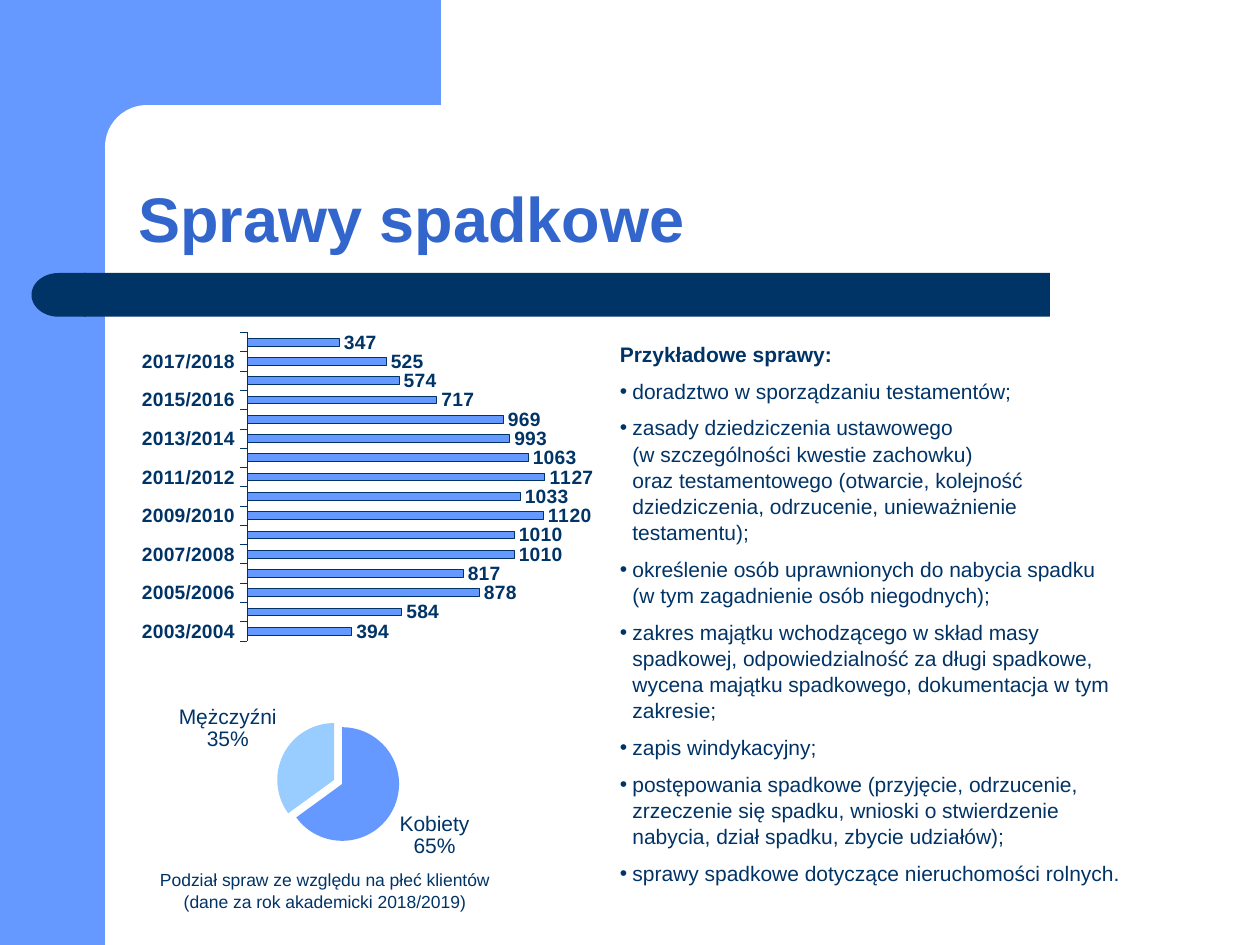
from lxml.etree import SubElement
from pptx import Presentation
from pptx.chart.data import CategoryChartData
from pptx.dml.color import RGBColor
from pptx.enum.chart import XL_CHART_TYPE, XL_LABEL_POSITION, XL_TICK_MARK
from pptx.enum.shapes import MSO_SHAPE
from pptx.enum.text import MSO_ANCHOR, MSO_AUTO_SIZE, PP_ALIGN
from pptx.oxml import parse_xml
from pptx.oxml.ns import nsdecls, qn
from pptx.util import Pt

FONT = "Arial"
BLUE, LIGHT, NAVY, WHITE, TITLE_BLUE = "6699FF", "99CCFF", "003366", "FFFFFF", "3366CC"

TITLE = "Sprawy spadkowe"
HEADING = "Przykładowe sprawy:"
EXAMPLES = [
    "doradztwo w sporządzaniu testamentów;",
    "zasady dziedziczenia ustawowego\n(w szczególności kwestie zachowku)\n"
    "oraz testamentowego (otwarcie, kolejność dziedziczenia, odrzucenie, "
    "unieważnienie testamentu);",
    "określenie osób uprawnionych do nabycia spadku\n(w tym zagadnienie osób niegodnych);",
    "zakres majątku wchodzącego w skład masy spadkowej, odpowiedzialność za długi "
    "spadkowe, wycena majątku spadkowego, dokumentacja w tym zakresie;",
    "zapis windykacyjny;",
    "postępowania spadkowe (przyjęcie, odrzucenie, zrzeczenie się spadku, wnioski "
    "o stwierdzenie nabycia, dział spadku, zbycie udziałów);",
    "sprawy spadkowe dotyczące nieruchomości rolnych.",
]
CAPTION = "Podział spraw ze względu na płeć klientów (dane za rok akademicki 2018/2019)"
FIRST_YEAR = 2003
CASES = [394, 584, 878, 817, 1010, 1010, 1120, 1033,
         1127, 1063, 993, 969, 717, 574, 525, 347]
CLIENTS = {"Kobiety": 65, "Mężczyźni": 35}

# shape, left, top, width, height, colour, rotation
DECORATION = [
    (MSO_SHAPE.RECTANGLE, 0, 0, 60, 540, BLUE, 0),
    (MSO_SHAPE.RECTANGLE, 54, 0, 198, 84, BLUE, 0),
    (MSO_SHAPE.ROUNDED_RECTANGLE, 60, 60, 402, 48, WHITE, 0),
    (MSO_SHAPE.RECTANGLE, 48, 156, 552, 25, NAVY, 0),
    (MSO_SHAPE.FLOWCHART_DELAY, 18, 156, 31, 25, NAVY, 180),
]


def colour(hex_code):
    return RGBColor.from_string(hex_code)


def set_font(font, size, hex_code=NAVY, bold=False):
    font.name, font.size, font.bold = FONT, Pt(size), bold
    font.color.rgb = colour(hex_code)


def place(shape, left, top, width, height):
    shape.left, shape.top, shape.width, shape.height = map(Pt, (left, top, width, height))


def set_bullet(paragraph, character=None, indent=0):
    """Give the paragraph a hanging bullet, or none; call before setting the font."""
    properties = paragraph._p.get_or_add_pPr()
    properties.set("marL", str(Pt(indent)))
    properties.set("indent", str(-Pt(indent)))
    if character:
        SubElement(properties, qn("a:buChar")).set("char", character)
    else:
        SubElement(properties, qn("a:buNone"))


def add_chart(kind, box, categories, values, plot):
    """Add a one-series chart whose inner plot area takes the given fractions."""
    data = CategoryChartData()
    data.categories = categories
    data.add_series("Series 1", values)
    chart = slide.shapes.add_chart(kind, *map(Pt, box), data).chart
    chart.has_legend = chart.has_title = False
    set_font(chart.font, 12)
    parts = "".join(f'<c:{name} val="{value}"/>' for name, value in zip("xywh", plot))
    layout = parse_xml(
        f'<c:layout {nsdecls("c")}><c:manualLayout><c:layoutTarget val="inner"/>'
        f'<c:xMode val="edge"/><c:yMode val="edge"/>{parts}</c:manualLayout></c:layout>')
    area = chart._chartSpace.chart.plotArea
    for old in area.findall(qn("c:layout")):
        area.remove(old)
    area.insert(0, layout)
    return chart


presentation = Presentation()
presentation.slide_width, presentation.slide_height = Pt(720), Pt(540)
slide = presentation.slides.add_slide(presentation.slide_layouts[1])
title, body = slide.placeholders

for kind, left, top, width, height, fill, rotation in DECORATION:
    shape = slide.shapes.add_shape(kind, *map(Pt, (left, top, width, height)))
    shape.shadow.inherit = False
    shape.fill.solid()
    shape.fill.fore_color.rgb = colour(fill)
    shape.line.fill.background()
    shape.rotation = rotation
    if kind == MSO_SHAPE.ROUNDED_RECTANGLE:
        shape.adjustments[0] = 0.5

# Title and list lie in front of the decoration
for placeholder in (title, body):
    slide.shapes._spTree.append(placeholder._element)
    placeholder.text_frame.auto_size = MSO_AUTO_SIZE.NONE

place(title, 72, 60, 630, 90)
title.text_frame.text = TITLE
title.text_frame.vertical_anchor = MSO_ANCHOR.BOTTOM
heading = title.text_frame.paragraphs[0]
heading.alignment = PP_ALIGN.LEFT
heading.line_spacing = 0.9
set_font(heading.font, 36, TITLE_BLUE, True)

place(body, 347, 191, 308, 320)
body.text_frame.vertical_anchor = MSO_ANCHOR.TOP
for index, text in enumerate([HEADING] + EXAMPLES):
    paragraph = body.text_frame.paragraphs[0] if index == 0 else body.text_frame.add_paragraph()
    paragraph.text = text
    paragraph.line_spacing = 1.04
    paragraph.space_before = Pt(6 if index else 0)
    if index:
        set_bullet(paragraph, "•", 7.2)
    else:
        set_bullet(paragraph)
    set_font(paragraph.font, 12, bold=index == 0)

years = [f"{year}/{year + 1}" for year in range(FIRST_YEAR, FIRST_YEAR + len(CASES))]
bar_chart = add_chart(XL_CHART_TYPE.BAR_CLUSTERED, (54, 173.5, 312, 205), years, CASES,
                      (0.28, 0.08, 0.58, 0.86))
bar_plot = bar_chart.plots[0]
bar_plot.gap_width = 150
bar_plot.vary_by_categories = False
bars = bar_plot.series[0]
bars.format.fill.solid()
bars.format.fill.fore_color.rgb = colour(BLUE)
bars.format.line.color.rgb = colour(NAVY)
bars.format.line.width = Pt(0.25)
bar_labels = bars.data_labels
bar_labels.show_value = True
bar_labels.position = XL_LABEL_POSITION.OUTSIDE_END
set_font(bar_labels.font, 11, bold=True)
year_axis, case_axis = bar_chart.category_axis, bar_chart.value_axis
year_axis.major_tick_mark = XL_TICK_MARK.OUTSIDE
year_axis.format.line.color.rgb = colour(NAVY)
year_axis.format.line.width = Pt(0.15)
set_font(year_axis.tick_labels.font, 11, bold=True)
case_axis.minimum_scale, case_axis.maximum_scale = 0, 1200
case_axis.has_major_gridlines = False
case_axis.visible = False

pie_chart = add_chart(XL_CHART_TYPE.PIE, (29.5, 388, 312, 119), list(CLIENTS),
                      list(CLIENTS.values()), (0.41, 0.2, 0.23, 0.59))
pie = pie_chart.plots[0].series[0]
explosion = parse_xml(f'<c:explosion {nsdecls("c")} val="8"/>')
pie._element.find(qn("c:tx")).addnext(explosion)
for index, fill in enumerate((BLUE, LIGHT)):
    point = pie.points[index].format
    point.fill.solid()
    point.fill.fore_color.rgb = colour(fill)
    point.line.fill.background()
pie_labels = pie.data_labels
pie_labels.show_value = False
pie_labels.show_category_name = pie_labels.show_percentage = True
pie_labels.position = XL_LABEL_POSITION.OUTSIDE_END
set_font(pie_labels.font, 12)
separator = parse_xml(f'<c:separator {nsdecls("c")}>\n</c:separator>')
pie_labels._element.find(qn("c:showBubbleSize")).addnext(separator)

caption = slide.shapes.add_textbox(*map(Pt, (76.5, 492.5, 218, 31)))
caption.text_frame.word_wrap = True
caption.text_frame.text = CAPTION
caption_line = caption.text_frame.paragraphs[0]
caption_line.alignment = PP_ALIGN.CENTER
caption_line.line_spacing = 1.04
set_font(caption_line.font, 10)

presentation.save("out.pptx")
